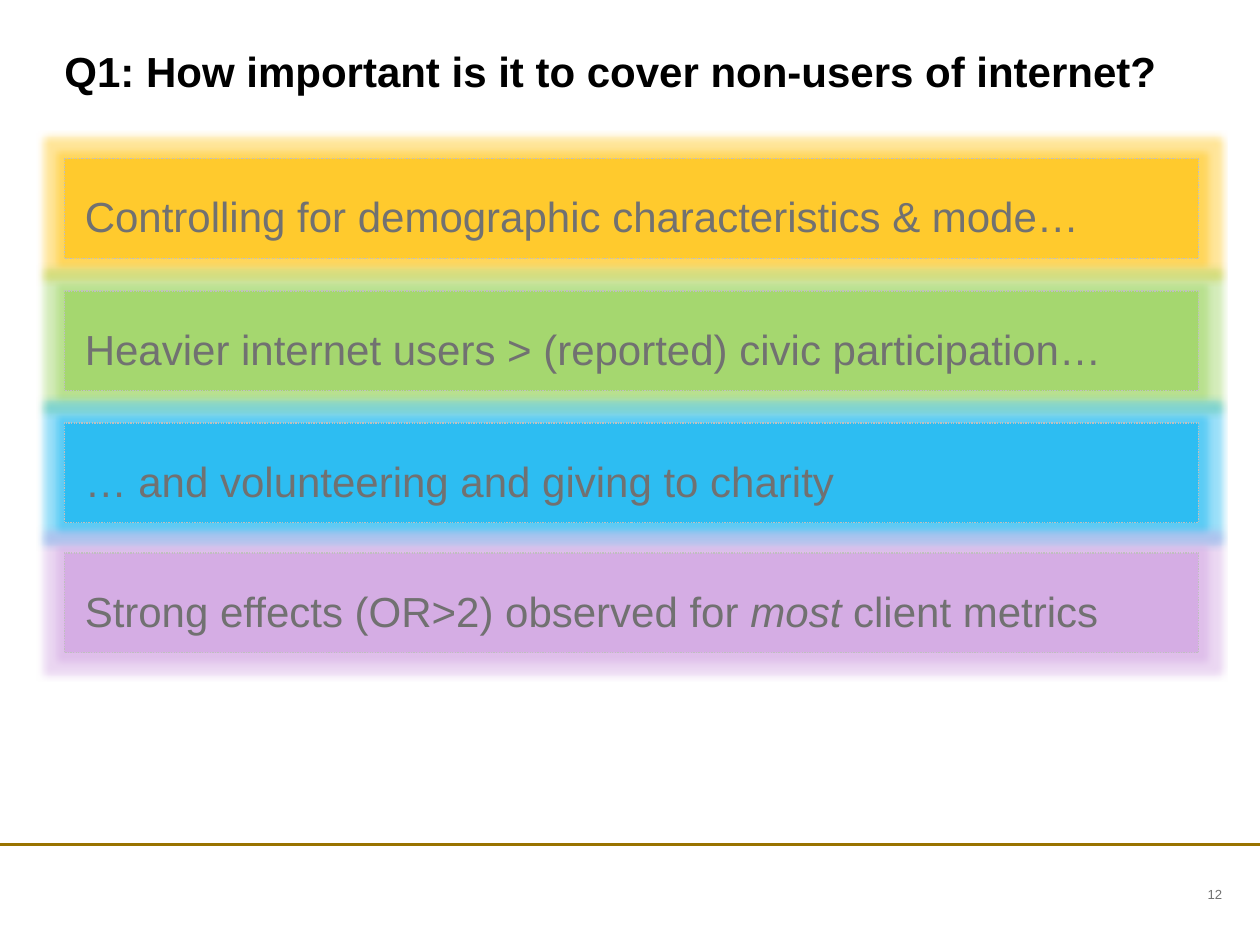
import pptx
import pptx.dml.color
import pptx.enum.dml
import pptx.enum.shapes
import pptx.enum.text
import pptx.oxml
import pptx.oxml.ns
import pptx.util

Cm = pptx.util.Cm
Pt = pptx.util.Pt
ALIGN = pptx.enum.text.PP_ALIGN
ANCHOR = pptx.enum.text.MSO_ANCHOR

LEFT, WIDTH = 1.3, 22.86
BAR_HEIGHT = 2.01
GREY = "717171"

# Top in cm, colour, and runs as (text, italic)
BARS = [
    (3.2, "FFC000", [("Controlling for demographic characteristics & mode…", False)]),
    (5.87, "92D050", [("Heavier internet users > (reported) civic participation…", False)]),
    (8.53, "00B0F0", [("… and volunteering and giving to charity", False)]),
    (11.15, "CD9CDF", [("Strong effects (OR>2) observed for ", False),
                       ("most", True), (" client metrics", False)]),
]


def color(value):
    return pptx.dml.color.RGBColor.from_string(value)


def set_frame(shape, margin, anchor):
    frame = shape.text_frame
    frame.word_wrap = True
    frame.vertical_anchor = anchor
    frame.margin_left = frame.margin_right = Cm(margin)
    frame.margin_top = frame.margin_bottom = Cm(margin)
    return frame


def add_run(paragraph, text, size, text_color, bold=False, italic=False):
    run = paragraph.add_run()
    run.text = text
    run.font.name = "Arial"
    run.font.size = Pt(size)
    run.font.bold = bold
    run.font.italic = italic
    run.font.color.rgb = color(text_color)


def set_title(slide, text):
    title = slide.shapes.title
    title.left, title.top = Cm(LEFT), Cm(0.91)
    title.width, title.height = Cm(WIDTH), Cm(2.03)
    frame = set_frame(title, 0, ANCHOR.TOP)
    frame.auto_size = pptx.enum.text.MSO_AUTO_SIZE.NONE
    paragraph = frame.paragraphs[0]
    paragraph.alignment = ALIGN.LEFT
    paragraph.space_before = Pt(0)
    add_run(paragraph, text, 24, "000000", bold=True)


def add_glow(shape, glow_color):
    effects = shape._element.spPr.find(pptx.oxml.ns.qn("a:effectLst"))
    effects.append(pptx.oxml.parse_xml(
        f'<a:glow {pptx.oxml.ns.nsdecls("a")} rad="{Pt(8)}">'
        f'<a:srgbClr val="{glow_color}"><a:alpha val="40000"/></a:srgbClr></a:glow>'))


def add_bar(slide, top, bar_color, runs):
    shape = slide.shapes.add_shape(pptx.enum.shapes.MSO_SHAPE.RECTANGLE,
                                   Cm(LEFT), Cm(top), Cm(WIDTH), Cm(BAR_HEIGHT))
    shape.shadow.inherit = False
    add_glow(shape, bar_color)

    # Half-transparent fill with a dotted outline
    shape.fill.solid()
    shape.fill.fore_color.rgb = color(bar_color)
    fill_color = shape._element.spPr.find(".//" + pptx.oxml.ns.qn("a:srgbClr"))
    fill_color.append(pptx.oxml.parse_xml(
        f'<a:alpha {pptx.oxml.ns.nsdecls("a")} val="50000"/>'))
    shape.line.color.rgb = color("BFBFBF")
    shape.line.width = Pt(0.75)
    shape.line.dash_style = pptx.enum.dml.MSO_LINE.ROUND_DOT

    frame = set_frame(shape, 0.41, ANCHOR.MIDDLE)
    frame.auto_size = pptx.enum.text.MSO_AUTO_SIZE.SHAPE_TO_FIT_TEXT
    paragraph = frame.paragraphs[0]
    paragraph.alignment = ALIGN.LEFT
    paragraph.line_spacing = 1.3
    for text, italic in runs:
        add_run(paragraph, text, 24, GREY, italic=italic)


def add_footer_line(slide, top, width):
    line = slide.shapes.add_connector(pptx.enum.shapes.MSO_CONNECTOR.STRAIGHT,
                                      0, Cm(top), width, Cm(top))
    line.line.color.rgb = color("997300")
    line.line.width = Pt(1.5)
    line._element.spPr.append(pptx.oxml.parse_xml(
        f'<a:effectLst {pptx.oxml.ns.nsdecls("a")}/>'))


def add_page_number(slide, number):
    box = slide.shapes.add_textbox(Cm(22.61), Cm(17.75), Cm(2.03), Cm(0.56))
    paragraph = set_frame(box, 0, ANCHOR.MIDDLE).paragraphs[0]
    paragraph.alignment = ALIGN.RIGHT
    add_run(paragraph, number, 7.5, GREY)


def main():
    presentation = pptx.Presentation()
    presentation.slide_width = Cm(25.4)
    presentation.slide_height = Cm(19.05)
    slide = presentation.slides.add_slide(presentation.slide_layouts[5])

    # Footer
    add_footer_line(slide, 17.02, presentation.slide_width)
    add_page_number(slide, "12")

    # Title and coloured statements
    set_title(slide, "Q1: How important is it to cover non-users of internet?")
    for top, bar_color, runs in BARS:
        add_bar(slide, top, bar_color, runs)

    presentation.save("out.pptx")


if __name__ == "__main__":
    main()
